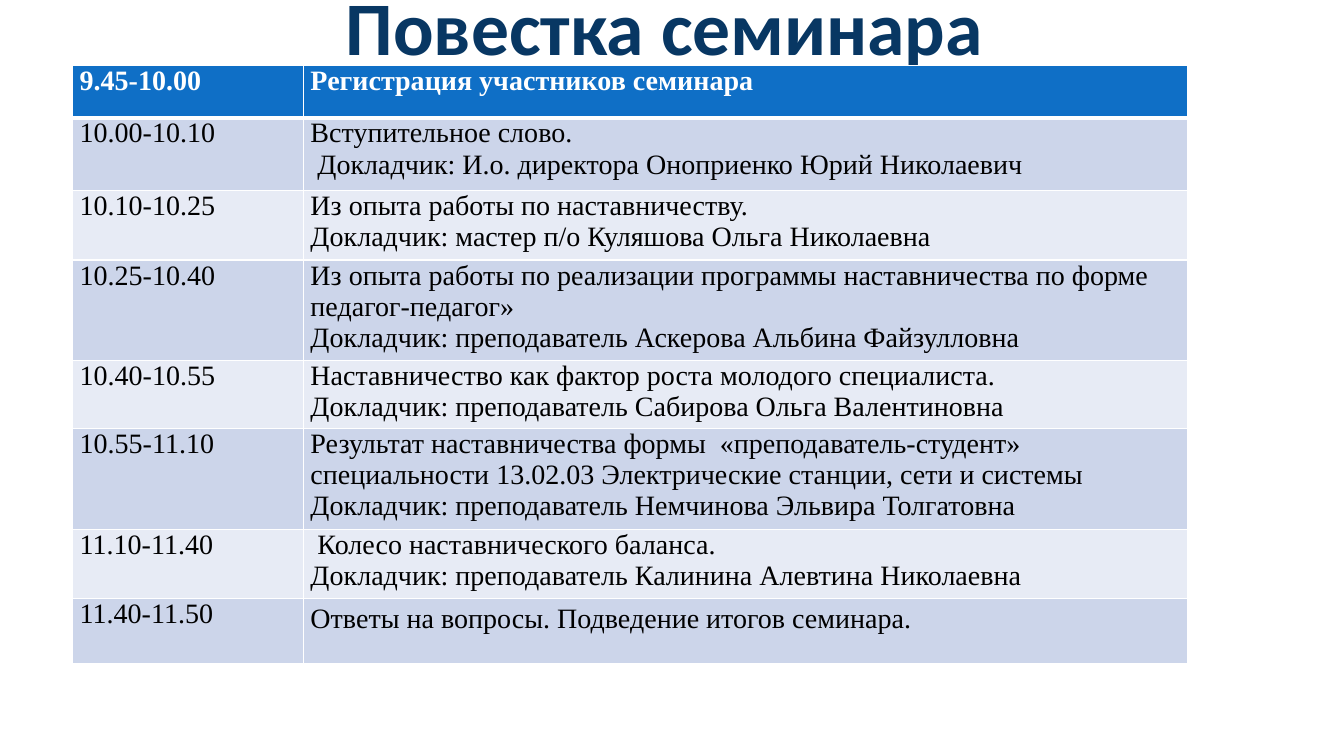
from lxml.etree import SubElement
from pptx import Presentation
from pptx.dml.color import RGBColor
from pptx.enum.text import MSO_ANCHOR, PP_ALIGN
from pptx.oxml.ns import qn
from pptx.util import Pt

PX = 9144
WHITE = RGBColor(0xFF, 0xFF, 0xFF)
BLACK = RGBColor(0x00, 0x00, 0x00)
NAVY = RGBColor(0x08, 0x37, 0x63)
BLUE = RGBColor(0x0F, 0x6F, 0xC6)
BAND_DARK = RGBColor(0xCC, 0xD5, 0xEA)
BAND_LIGHT = RGBColor(0xE7, 0xEB, 0xF5)

COLUMN_WIDTHS = [229, 877]
AGENDA = [
    (52, "9.45-10.00", ["Регистрация участников семинара"]),
    (72, "10.00-10.10", [
        "Вступительное слово.",
        " Докладчик: И.о. директора Оноприенко Юрий Николаевич"]),
    (69, "10.10-10.25", [
        "Из опыта работы по наставничеству.",
        "Докладчик: мастер п/о Куляшова Ольга Николаевна"]),
    (100, "10.25-10.40", [
        "Из опыта работы по реализации программы наставничества по форме педагог-педагог»",
        "Докладчик: преподаватель Аскерова Альбина Файзулловна"]),
    (67, "10.40-10.55", [
        "Наставничество как фактор роста молодого специалиста.",
        "Докладчик: преподаватель Сабирова Ольга Валентиновна"]),
    (98, "10.55-11.10", [
        "Результат наставничества формы  «преподаватель-студент» "
        "специальности 13.02.03 Электрические станции, сети и системы",
        "Докладчик: преподаватель Немчинова Эльвира Толгатовна"]),
    (69, "11.10-11.40", [
        " Колесо наставнического баланса.",
        "Докладчик: преподаватель Калинина Алевтина Николаевна"]),
    (64, "11.40-11.50", ["Ответы на вопросы. Подведение итогов семинара."]),
]


def px(value):
    return value * PX


def add_run(p, text, font, size, color, bold):
    r = p.add_run()
    r.text = text
    r.font.name = font
    r.font.size = Pt(size)
    r.font.color.rgb = color
    r.font.bold = bold


def add_title(s, text):
    sp = s.shapes.add_textbox(px(38), px(-28), px(1242), px(117))
    tf = sp.text_frame
    tf.word_wrap = True
    tf.vertical_anchor = MSO_ANCHOR.MIDDLE
    p = tf.paragraphs[0]
    p.alignment = PP_ALIGN.CENTER
    p.line_spacing = 0.9
    add_run(p, text, "Calibri", 54, NAVY, True)


def set_borders(cell, top, bottom):
    tcPr = cell._tc.get_or_add_tcPr()
    for side, width in (("L", 1), ("R", 1), ("T", top), ("B", bottom)):
        ln = SubElement(tcPr, qn(f"a:ln{side}"), w=str(Pt(width)))
        fill = SubElement(ln, qn("a:solidFill"))
        SubElement(fill, qn("a:srgbClr"), val=str(WHITE))


def fill_cell(cell, lines, row):
    header = row == 0
    set_borders(cell, 3 if row == 1 else 1, 3 if header else 1)
    cell.fill.solid()
    cell.fill.fore_color.rgb = BLUE if header else BAND_DARK if row % 2 else BAND_LIGHT
    cell.margin_left = cell.margin_right = px(7)
    cell.margin_top = cell.margin_bottom = 0
    tf = cell.text_frame
    for i, line in enumerate(lines):
        p = tf.add_paragraph() if i else tf.paragraphs[0]
        add_run(p, line, "Times New Roman", 20, WHITE if header else BLACK, header)


def add_agenda(s):
    height = sum(row[0] for row in AGENDA)
    table = s.shapes.add_table(len(AGENDA), len(COLUMN_WIDTHS), px(72), px(65),
                               px(sum(COLUMN_WIDTHS)), px(height)).table
    for column, width in zip(table.columns, COLUMN_WIDTHS):
        column.width = px(width)
    for i, (row_height, time, lines) in enumerate(AGENDA):
        table.rows[i].height = px(row_height)
        fill_cell(table.cell(i, 0), [time], i)
        fill_cell(table.cell(i, 1), lines, i)
    closing = table.cell(len(AGENDA) - 1, 1).text_frame.paragraphs[0]
    closing.alignment = PP_ALIGN.JUSTIFY
    closing.line_spacing = 1.15


def main():
    prs = Presentation()
    prs.slide_width, prs.slide_height = px(1333), px(750)
    s = prs.slides.add_slide(prs.slide_layouts[6])
    add_title(s, "Повестка семинара")
    add_agenda(s)
    prs.save("out.pptx")


if __name__ == "__main__":
    main()
